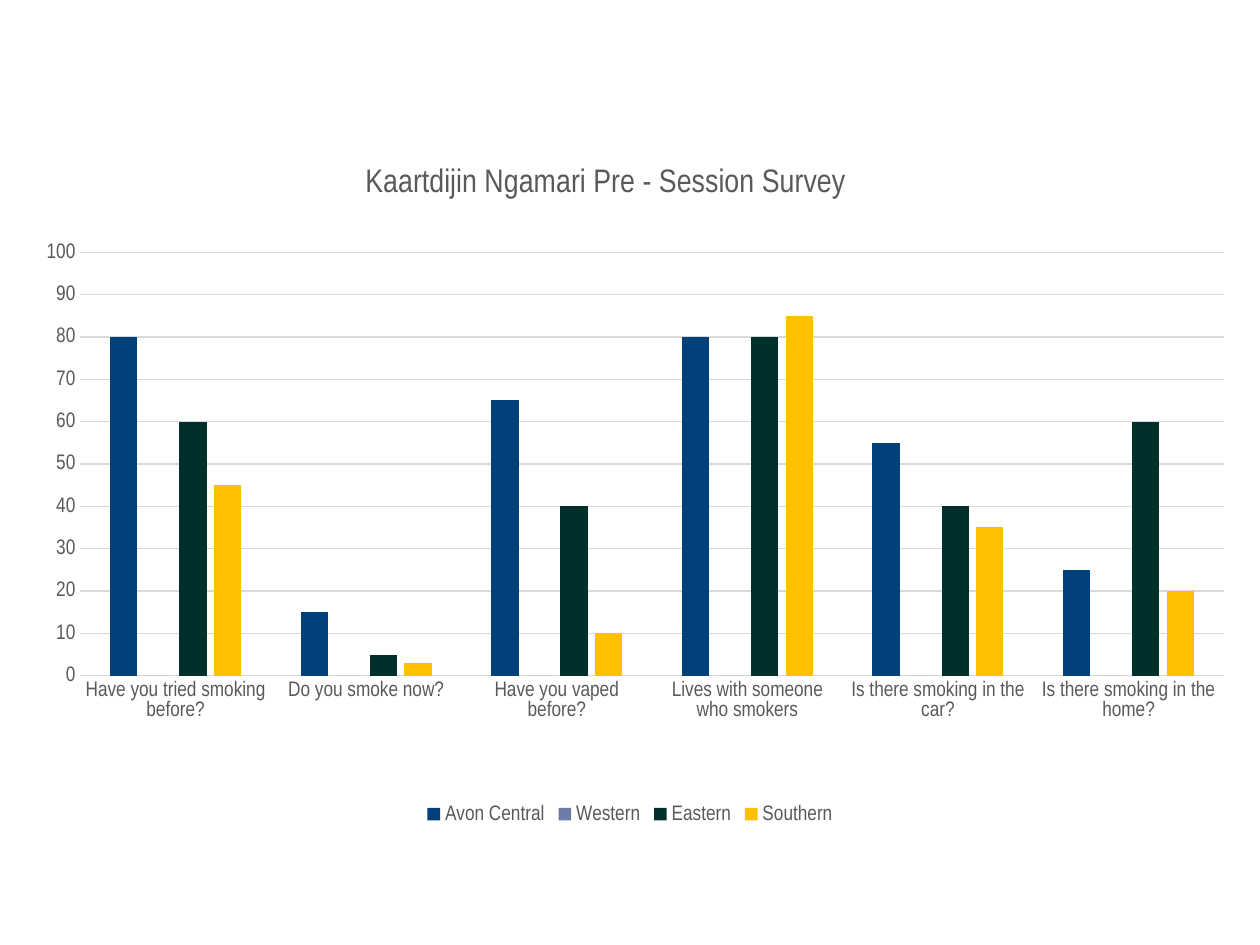
from dataclasses import dataclass

from lxml import etree
from pptx import Presentation
from pptx.chart.data import CategoryChartData
from pptx.dml.color import RGBColor
from pptx.enum.chart import XL_CHART_TYPE, XL_LEGEND_POSITION, XL_TICK_MARK
from pptx.oxml.ns import qn
from pptx.util import Inches, Pt

CLUSTERED = XL_CHART_TYPE.COLUMN_CLUSTERED
LEGEND_BOTTOM = XL_LEGEND_POSITION.BOTTOM
NO_TICK = XL_TICK_MARK.NONE

NAVY = RGBColor(0x00, 0x41, 0x7C)
SLATE = RGBColor(0x6C, 0x7C, 0xA4)
DARK_GREEN = RGBColor(0x00, 0x30, 0x2C)
AMBER = RGBColor(0xFF, 0xC0, 0x00)
GRAY_TEXT = RGBColor(0x59, 0x59, 0x59)
GRID_GRAY = RGBColor(0xD9, 0xD9, 0xD9)
FONT = "Arial Narrow"


@dataclass(frozen=True)
class Region:
    name: str
    percentages: tuple[int, ...]
    color: RGBColor


QUESTIONS = (
    "Have you tried smoking before?",
    "Do you smoke now?",
    "Have you vaped before?",
    "Lives with someone who smokers",
    "Is there smoking in the car?",
    "Is there smoking in the home?",
)
REGIONS = (
    Region("Avon Central", (80, 15, 65, 80, 55, 25), NAVY),
    Region("Western", (0, 0, 0, 0, 0, 0), SLATE),
    Region("Eastern", (60, 5, 40, 80, 40, 60), DARK_GREEN),
    Region("Southern", (45, 3, 10, 85, 35, 20), AMBER),
)


def style_font(font, size: float = 12, color: RGBColor = GRAY_TEXT) -> None:
    font.name = FONT
    font.size = Pt(size)
    font.bold = False
    font.color.rgb = color


def write_text(frame, text: str, **font_format) -> None:
    paragraph = frame.paragraphs[0]
    run = paragraph.add_run()
    run.text = text
    style_font(run.font, **font_format)


def style_line(line) -> None:
    line.color.rgb = GRID_GRAY
    line.width = Pt(0.75)


def place(parent, position: int, **settings) -> None:
    """Give a chart part a manual layout, as fractions of the chart area."""
    for old in parent.findall(qn("c:layout")):
        parent.remove(old)
    layout = etree.Element(qn("c:layout"))
    manual = etree.SubElement(layout, qn("c:manualLayout"))
    for tag, value in settings.items():
        etree.SubElement(manual, qn(f"c:{tag}")).set("val", str(value))
    parent.insert(position, layout)


def add_survey_chart(slide) -> None:
    survey = CategoryChartData(number_format="#,##0")
    survey.categories = QUESTIONS
    for region in REGIONS:
        survey.add_series(region.name, region.percentages)
    chart = slide.shapes.add_chart(
        CLUSTERED, Inches(0.12), Inches(1.15), Inches(9.76), Inches(5.43), survey
    ).chart
    style_font(chart.font)

    chart.has_title = True
    title = chart.chart_title
    write_text(title.text_frame, "Kaartdijin Ngamari Pre - Session Survey", size=18.6)
    title.include_in_layout = False
    place(title._element, 1, xMode="edge", yMode="edge", x=0.28, y=0.02)
    place(
        chart._chartSpace.chart.plotArea, 0, layoutTarget="inner",
        xMode="edge", yMode="edge", x=0.053, y=0.157, w=0.93, h=0.619,
    )

    columns = chart.plots[0]
    columns.gap_width = 219
    columns.overlap = -27
    columns.vary_by_categories = False
    for series, region in zip(columns.series, REGIONS):
        series.format.fill.solid()
        series.format.fill.fore_color.rgb = region.color
        series.invert_if_negative = False

    questions, percent = chart.category_axis, chart.value_axis
    for axis in (questions, percent):
        axis.major_tick_mark = axis.minor_tick_mark = NO_TICK
        style_font(axis.tick_labels.font)
    style_line(questions.format.line)
    percent.minimum_scale = 0
    percent.maximum_scale = 100
    percent.major_unit = 10
    percent.format.line.fill.background()
    percent.has_major_gridlines = True
    style_line(percent.major_gridlines.format.line)

    chart.has_legend = True
    chart.legend.position = LEGEND_BOTTOM
    chart.legend.include_in_layout = False
    style_font(chart.legend.font)


def main() -> None:
    deck = Presentation()
    deck.slide_width = Inches(10)
    deck.slide_height = Inches(7.5)
    add_survey_chart(deck.slides.add_slide(deck.slide_layouts[6]))
    deck.save("out.pptx")


if __name__ == "__main__":
    main()
